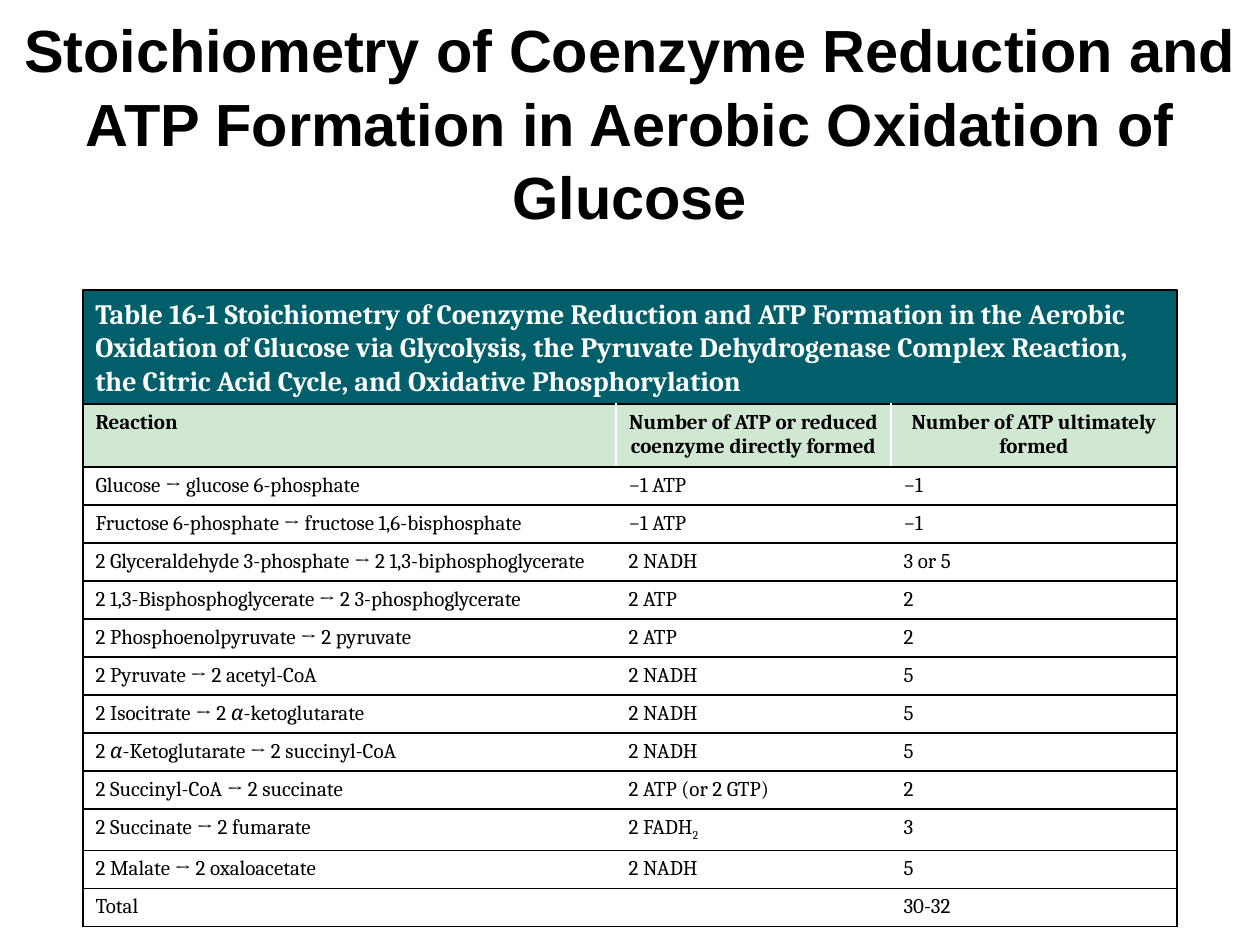
from lxml.etree import SubElement
from pptx import Presentation
from pptx.dml.color import RGBColor
from pptx.enum.shapes import MSO_SHAPE
from pptx.enum.text import MSO_ANCHOR, PP_ALIGN
from pptx.oxml.ns import qn
from pptx.util import Emu, Pt

EMU_PER_PX = 914400 / 126
BLACK, WHITE, TEAL, MINT = "000000", "FFFFFF", "005F6A", "D0E7D2"


def px(length):
    return Emu(round(length * EMU_PER_PX))


def color(hex_text):
    return RGBColor.from_string(hex_text)


class SlideBuilder:
    title_font = "Arial"
    body_font = "Cambria"

    def __init__(self, slide):
        self.slide = slide

    def fill_text(self, text_frame, parts, font, size, hex_text, bold=False,
                  align=PP_ALIGN.LEFT):
        """Fill the first paragraph; parts is a list of (text, style) pairs."""
        paragraph = text_frame.paragraphs[0]
        paragraph.alignment = align
        paragraph.font.name = font
        paragraph.font.size = Pt(size)
        paragraph.font.bold = bold
        paragraph.font.color.rgb = color(hex_text)
        for text, style in parts:
            run = paragraph.add_run()
            run.text = text
            if style == "italic":
                run.font.italic = True
            elif style == "subscript":
                run._r.get_or_add_rPr().set("baseline", "-25000")
        if not parts:
            # An empty paragraph takes its height from its end mark
            SubElement(paragraph._p, qn("a:endParaRPr"), sz=str(size * 100))
        return paragraph

    def title(self, left, top, width, height, text):
        shape = self.slide.shapes.add_textbox(px(left), px(top), px(width), px(height))
        shape.text_frame.word_wrap = True
        shape.text_frame.vertical_anchor = MSO_ANCHOR.MIDDLE
        paragraph = self.fill_text(shape.text_frame, [(text, None)], self.title_font,
                                   34, BLACK, True, PP_ALIGN.CENTER)
        paragraph.line_spacing = 1.03

    def banner(self, left, top, width, height, text):
        shape = self.slide.shapes.add_shape(
            MSO_SHAPE.RECTANGLE, px(left), px(top), px(width), px(height))
        shape.shadow.inherit = False
        shape.fill.solid()
        shape.fill.fore_color.rgb = color(TEAL)
        shape.line.color.rgb = color(BLACK)
        shape.line.width = Pt(0.75)
        shape.text_frame.word_wrap = True
        shape.text_frame.vertical_anchor = MSO_ANCHOR.TOP
        self.fill_text(shape.text_frame, [(text, None)], self.body_font, 16, WHITE, True)

    def cell_borders(self, cell, **sides):
        properties = cell._tc.get_or_add_tcPr()
        for side, hex_text in sides.items():
            line = SubElement(properties, qn(f"a:ln{side}"), w=str(Pt(1)))
            fill = SubElement(line, qn("a:solidFill"))
            SubElement(fill, qn("a:srgbClr"), val=hex_text)

    def table(self, left, top, column_widths, row_heights, rows):
        table = self.slide.shapes.add_table(
            len(rows), len(column_widths), px(left), px(top),
            px(sum(column_widths)), px(sum(row_heights))).table
        for column, width in zip(table.columns, column_widths):
            column.width = px(width)
        last = len(column_widths) - 1
        for row_index, (height, contents) in enumerate(zip(row_heights, rows)):
            table.rows[row_index].height = px(height)
            header = row_index == 0
            for column_index, content in enumerate(contents):
                cell = table.cell(row_index, column_index)
                self.cell_borders(cell,
                                  L=BLACK if column_index == 0 else WHITE,
                                  R=BLACK if column_index == last else WHITE,
                                  T=BLACK, B=BLACK)
                cell.fill.solid()
                cell.fill.fore_color.rgb = color(MINT if header else WHITE)
                parts = [(content, None)] if isinstance(content, str) else content
                centered = header and column_index > 0
                self.fill_text(cell.text_frame, parts, self.body_font, 12, BLACK, header,
                               PP_ALIGN.CENTER if centered else PP_ALIGN.LEFT)


ALPHA = ("α", "italic")
REACTIONS = [
    ("Reaction", "Number of ATP or reduced coenzyme directly formed",
     "Number of ATP ultimately formed"),
    ("Glucose → glucose 6-phosphate", "−1 ATP", "−1"),
    ("Fructose 6-phosphate → fructose 1,6-bisphosphate", "−1 ATP", "−1"),
    ("2 Glyceraldehyde 3-phosphate → 2 1,3-biphosphoglycerate", "2 NADH", "3 or 5"),
    ("2 1,3-Bisphosphoglycerate → 2 3-phosphoglycerate", "2 ATP", "2"),
    ("2 Phosphoenolpyruvate → 2 pyruvate", "2 ATP", "2"),
    ("2 Pyruvate → 2 acetyl-CoA", "2 NADH", "5"),
    ([("2 Isocitrate → 2 ", None), ALPHA, ("-ketoglutarate", None)], "2 NADH", "5"),
    ([("2 ", None), ALPHA, ("-Ketoglutarate → 2 succinyl-CoA", None)], "2 NADH", "5"),
    ("2 Succinyl-CoA → 2 succinate", "2 ATP (or 2 GTP)", "2"),
    ("2 Succinate → 2 fumarate", [("2 FADH", None), ("2", "subscript")], "3"),
    ("2 Malate → 2 oxaloacetate", "2 NADH", "5"),
    ("Total", [], "30-32"),
]


def main():
    presentation = Presentation()
    presentation.slide_width, presentation.slide_height = px(1260), px(945)
    builder = SlideBuilder(presentation.slides.add_slide(presentation.slide_layouts[6]))

    # Heading
    builder.title(0, 22, 1260, 199,
                  "Stoichiometry of Coenzyme Reduction and ATP Formation "
                  "in Aerobic Oxidation of Glucose")

    # Table caption
    builder.banner(83, 290, 1094, 114,
                   "Table 16-1 Stoichiometry of Coenzyme Reduction and ATP Formation "
                   "in the Aerobic Oxidation of Glucose via Glycolysis, the Pyruvate "
                   "Dehydrogenase Complex Reaction, the Citric Acid Cycle, and "
                   "Oxidative Phosphorylation")

    # Reactions: header row, then even rows with a taller one for the subscript
    builder.table(83, 404, [533, 275, 286], [63] + [38] * 9 + [41] + [38] * 2, REACTIONS)

    presentation.save("out.pptx")


if __name__ == "__main__":
    main()
